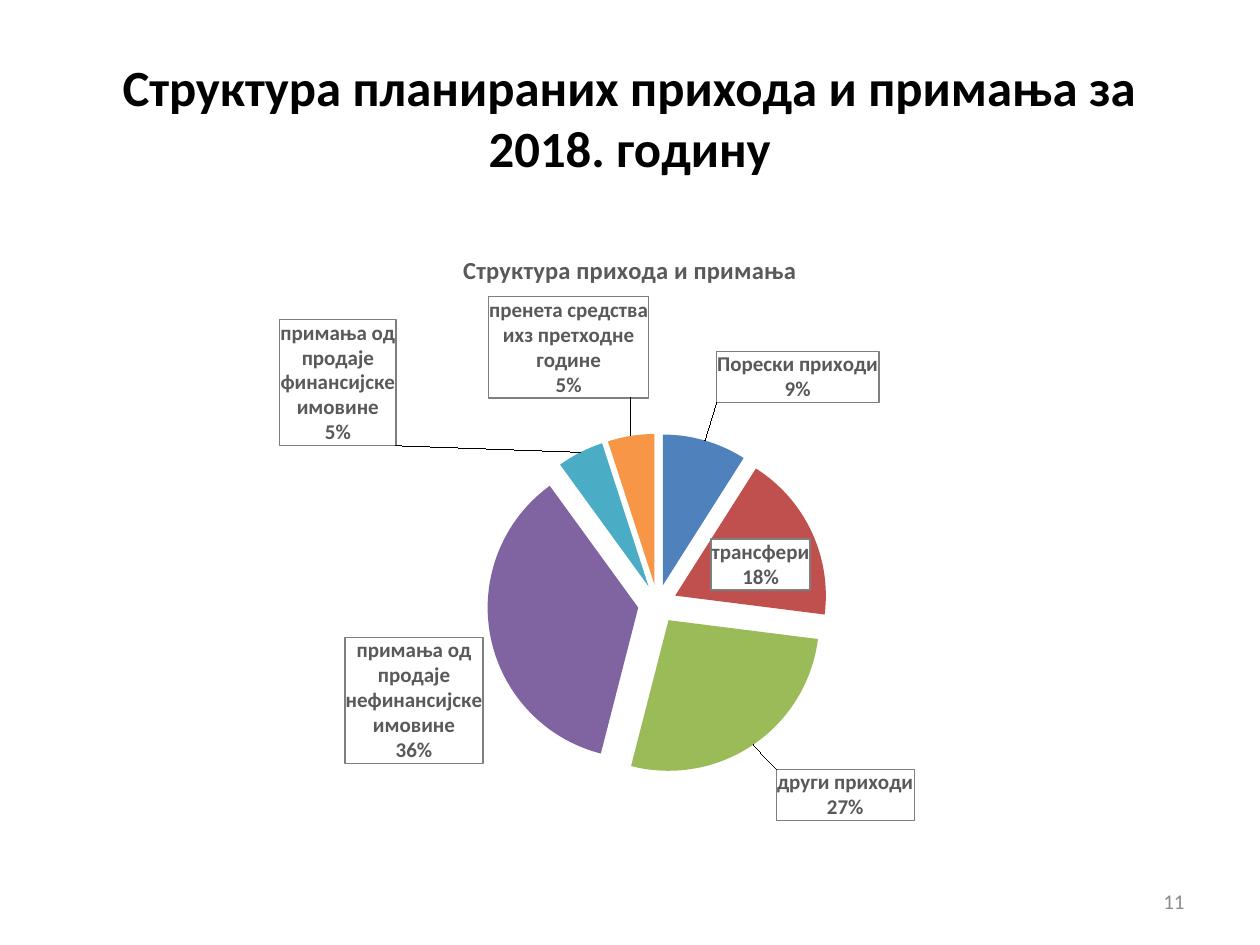
import copy
import pptx
import pptx.chart.data
import pptx.dml.color
import pptx.enum.chart
import pptx.enum.text
import pptx.oxml
import pptx.util
from pptx.util import Inches


def color(value):
    return pptx.dml.color.RGBColor.from_string(value)


def style(font, size, value, bold=False):
    font.name = "Calibri"
    font.size = pptx.util.Pt(size)
    font.bold = bold
    font.color.rgb = color(value)


presentation = pptx.Presentation()
presentation.slide_width = Inches(10)
presentation.slide_height = Inches(7.5)
slide = presentation.slides.add_slide(presentation.slide_layouts[5])

# Title
title = slide.shapes.title
title.left, title.top = Inches(0.5), Inches(0.3)
title.width, title.height = Inches(9), Inches(1.25)
title.text_frame.text = "Структура планираних прихода и примања за 2018. годину"
title.text_frame.vertical_anchor = pptx.enum.text.MSO_ANCHOR.MIDDLE
paragraph = title.text_frame.paragraphs[0]
paragraph.alignment = pptx.enum.text.PP_ALIGN.CENTER
style(paragraph.runs[0].font, 29, "000000", True)

# Pie chart: category, share, slice colour, label offset from its default place
slices = [
    ("Порески приходи", 9, "4F81BD", (0.01, -0.05)),
    ("трансфери", 18, "C0504D", None),
    ("други приходи", 27, "9BBB59", (0.02, 0.03)),
    ("примања од продаје нефинансијске имовине", 36, "8064A2", None),
    ("примања од продаје финансијске имовине", 5, "4BACC6", (-0.19, 0)),
    ("пренета средства ихз претходне године", 5, "F79646", (0.02, -0.05)),
]
chart_data = pptx.chart.data.CategoryChartData()
chart_data.categories = [name for name, *_ in slices]
chart_data.add_series("Series 1", [share for _, share, *_ in slices])
chart = slide.shapes.add_chart(
    pptx.enum.chart.XL_CHART_TYPE.PIE_EXPLODED,
    Inches(1.22), Inches(1.82), Inches(7.56), Inches(4.86), chart_data).chart
style(chart.font, 10, "000000")
chart.has_legend = False
chart.has_title = True
chart.chart_title.text_frame.text = "Структура прихода и примања"
style(chart.chart_title.text_frame.paragraphs[0].runs[0].font, 14, "595959", True)

plot = chart.plots[0]
plot.vary_by_categories = True
series = plot.series[0]
for explosion in series._element.xpath("c:explosion"):
    explosion.set("val", "13")
for index, (_, _, fill, _) in enumerate(slices):
    slice_fill = series.points[index].format.fill
    slice_fill.solid()
    slice_fill.fore_color.rgb = color(fill)
    point = series._element.xpath(f'c:dPt[c:idx/@val="{index}"]')[0]
    point.get_or_add_spPr().addprevious(pptx.oxml.parse_xml(
        f'<c:explosion {pptx.oxml.ns.nsdecls("c")} val="13"/>'))

# Position of the pie inside the chart
names = pptx.oxml.ns.nsdecls("c", "a")
plot_area = chart._chartSpace.chart.plotArea
for layout in plot_area.xpath("c:layout"):
    plot_area.remove(layout)
plot_area.insert(0, pptx.oxml.parse_xml(
    f'<c:layout {names}><c:manualLayout><c:layoutTarget val="inner"/>'
    '<c:xMode val="edge"/><c:yMode val="edge"/><c:x val="0.215"/><c:y val="0.334"/>'
    '<c:w val="0.628"/><c:h val="0.556"/></c:manualLayout></c:layout>'))

# Boxed labels with category and percentage
labels = series.data_labels
style(labels.font, 12, "595959", True)
labels.show_value = False
labels.show_category_name = True
labels.show_percentage = True
labels.show_legend_key = False
labels.position = pptx.enum.chart.XL_LABEL_POSITION.BEST_FIT
labels_element = labels._element
text_format = labels_element.xpath("c:txPr")[0]
box = pptx.oxml.parse_xml(
    f'<c:spPr {names}><a:solidFill><a:srgbClr val="FFFFFF"/></a:solidFill>'
    '<a:ln w="9525"><a:solidFill><a:srgbClr val="7F7F7F"/></a:solidFill></a:ln></c:spPr>')
text_format.addprevious(box)

# Labels that are moved away from their slices
moved = [(index, offset) for index, (*_, offset) in enumerate(slices) if offset]
for place, (index, (x, y)) in enumerate(moved):
    label = pptx.oxml.parse_xml(
        f'<c:dLbl {names}><c:idx val="{index}"/><c:layout><c:manualLayout>'
        f'<c:x val="{x}"/><c:y val="{y}"/></c:manualLayout></c:layout>'
        '<c:dLblPos val="bestFit"/><c:showLegendKey val="0"/><c:showVal val="0"/>'
        '<c:showCatName val="1"/><c:showSerName val="0"/><c:showPercent val="1"/>'
        '<c:showBubbleSize val="0"/></c:dLbl>')
    label.insert(2, copy.deepcopy(box))
    label.insert(3, copy.deepcopy(text_format))
    labels_element.insert(place, label)

# Slide number
number = slide.shapes.add_textbox(Inches(7.17), Inches(6.95), Inches(2.33), Inches(0.4))
number.text_frame.word_wrap = True
number.text_frame.vertical_anchor = pptx.enum.text.MSO_ANCHOR.MIDDLE
number.text_frame.text = "11"
paragraph = number.text_frame.paragraphs[0]
paragraph.alignment = pptx.enum.text.PP_ALIGN.RIGHT
style(paragraph.runs[0].font, 12, "8C8C8C")

presentation.save("out.pptx")
